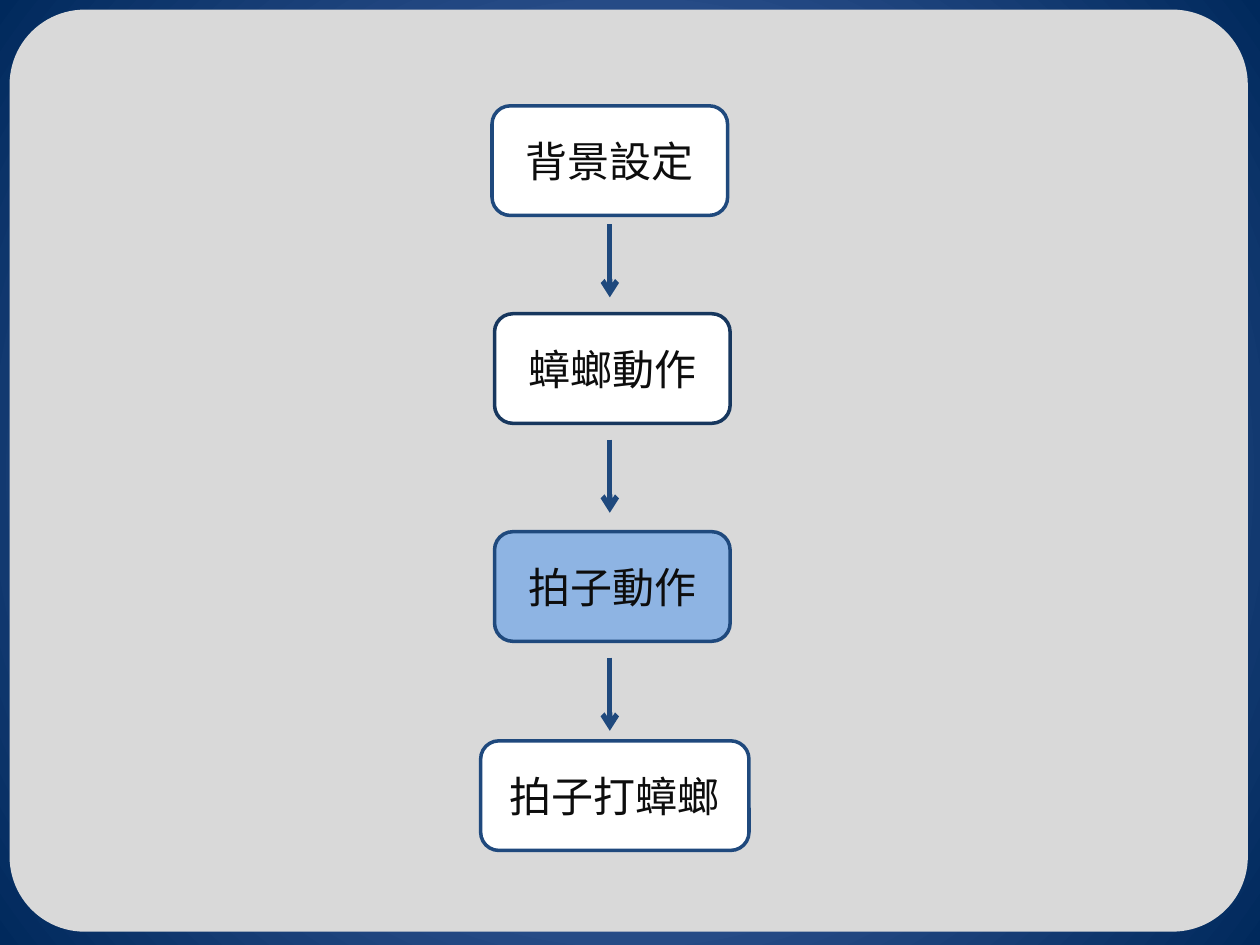
from typing import NamedTuple

from pptx import Presentation
from pptx import util as u
from pptx.dml.color import RGBColor
from pptx.enum import shapes, text
from pptx.oxml import ns
from lxml import etree

WIDE, HIGH = 10, 7.5
FACE = "Noto Sans CJK SC"
NAVY, INK, GREY, WHITE = "1F497D", "0D0D0D", "D9D9D9", "FFFFFF"
BOX_W, BOX_H = 1.87, 0.87
AXIS = 4.84  # centre line of the arrows
ARROW = 0.58


class Step(NamedTuple):
    label: str
    mid: float
    top: float
    width: float = BOX_W
    fill: str = WHITE
    edge: str = NAVY


STEPS = [
    Step("背景設定", 4.84, 0.84),
    Step("蟑螂動作", 4.86, 2.49, edge="17375E"),
    Step("拍子動作", 4.86, 4.22, fill="8EB4E3"),
    Step("拍子打蟑螂", 4.88, 5.88, width=2.13),
]
ARROW_TOPS = [1.78, 3.49, 5.22]


def rgb(code: str) -> RGBColor:
    return RGBColor.from_string(code)


def add(parent, tag: str, **attrs: str):
    return etree.SubElement(parent, ns.qn(tag), **attrs)


def paint_back(slide) -> None:
    """Fill the background with a gradient that spreads from the centre."""
    fill = slide.background.fill
    fill.gradient()
    for stop, place, code in zip(fill.gradient_stops, (0, 1), ("5E7CC5", "00295C")):
        stop.position = place
        stop.color.rgb = rgb(code)
    grad = slide.background._cSld.find(".//" + ns.qn("a:gradFill"))
    grad.remove(grad.find(ns.qn("a:lin")))
    ring = add(grad, "a:path", path="circle")
    add(ring, "a:fillToRect", l="50000", t="50000", r="50000", b="50000")


def add_box(slide, left: float, top: float, width: float, height: float,
            fill: str, edge: str):
    box = slide.shapes.add_shape(
        shapes.MSO_SHAPE.ROUNDED_RECTANGLE,
        *map(u.Inches, (left, top, width, height)))
    box.shadow.inherit = False
    box.fill.solid()
    box.fill.fore_color.rgb = rgb(fill)
    box.line.color.rgb = rgb(edge)
    box.line.width = u.Pt(2)
    return box


def add_step(slide, step: Step) -> None:
    box = add_box(slide, step.mid - step.width / 2, step.top,
                  step.width, BOX_H, step.fill, step.edge)
    frame = box.text_frame
    frame.vertical_anchor = text.MSO_ANCHOR.MIDDLE
    para = frame.paragraphs[0]
    para.text = step.label
    para.alignment = text.PP_ALIGN.CENTER
    font = para.font
    font.size = u.Pt(24)
    font.color.rgb = rgb(INK)
    font.name = FACE
    props = para._p.find(".//" + ns.qn("a:defRPr"))
    add(props, "a:ea", typeface=FACE)


def add_arrow(slide, top: float) -> None:
    line = slide.shapes.add_connector(
        shapes.MSO_CONNECTOR.STRAIGHT,
        *map(u.Inches, (AXIS, top, AXIS, top + ARROW)))
    line.line.color.rgb = rgb(NAVY)
    line.line.width = u.Pt(3)
    add(line.line._get_or_add_ln(), "a:tailEnd", type="arrow")
    add(line._element.spPr, "a:effectLst")


def main() -> None:
    deck = Presentation()
    deck.slide_width, deck.slide_height = u.Inches(WIDE), u.Inches(HIGH)
    slide = deck.slides.add_slide(deck.slide_layouts[6])
    paint_back(slide)
    panel = add_box(slide, 0.09, 0.09, 9.8, 7.29, GREY, GREY)
    panel.adjustments[0] = 0.08
    for step in STEPS:
        add_step(slide, step)
    for top in ARROW_TOPS:
        add_arrow(slide, top)
    deck.save("out.pptx")


if __name__ == "__main__":
    main()
